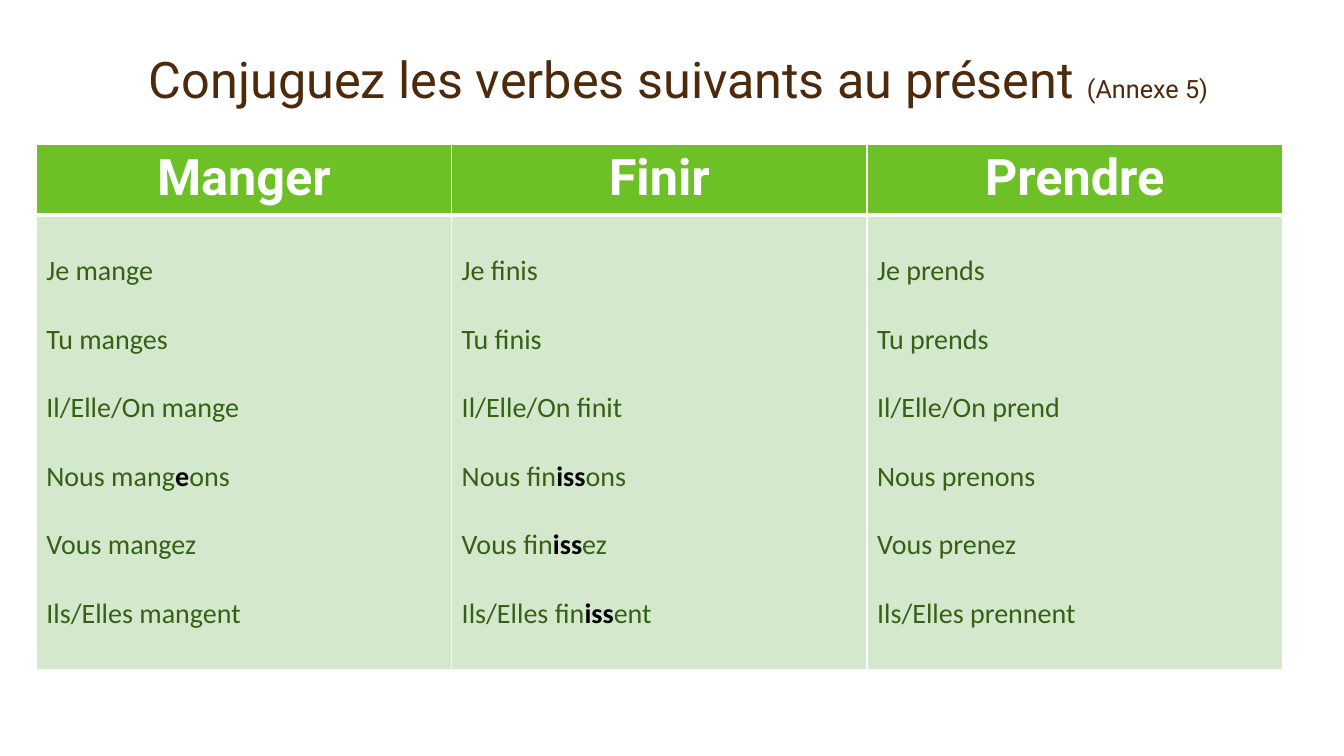
from dataclasses import dataclass

from lxml import etree
from pptx import Presentation
from pptx.dml.color import RGBColor
from pptx.enum.text import MSO_ANCHOR, PP_ALIGN
from pptx.oxml.ns import qn
from pptx.util import Inches, Pt

CENTER = PP_ALIGN.CENTER
MIDDLE = MSO_ANCHOR.MIDDLE
BLANK = 6


@dataclass(frozen=True)
class Theme:
    brown: str = "4D2A0B"
    green: str = "6DC025"
    pale: str = "D4E8CD"
    dark: str = "366013"
    black: str = "000000"
    white: str = "FFFFFF"
    head: str = "Roboto"
    body: str = "Calibri"
    big: int = 36
    mid: int = 20
    small: int = 18


THEME = Theme()
TITLE = "Conjuguez les verbes suivants au présent "
NOTE = "(Annexe 5)"
# Asterisks enclose the letters to stress.
VERBS = {
    "Manger": ["Je mange", "Tu manges", "Il/Elle/On mange",
               "Nous mang*e*ons", "Vous mangez", "Ils/Elles mangent"],
    "Finir": ["Je finis", "Tu finis", "Il/Elle/On finit",
              "Nous fin*iss*ons", "Vous fin*iss*ez", "Ils/Elles fin*iss*ent"],
    "Prendre": ["Je prends", "Tu prends", "Il/Elle/On prend",
                "Nous prenons", "Vous prenez", "Ils/Elles prennent"],
}


def add_run(para, text, face, size, color, bold=False):
    run = para.add_run()
    run.text = text
    font = run.font
    font.name, font.size, font.bold = face, Pt(size), bold
    font.color.rgb = RGBColor.from_string(color)


def add_title(slide, left, top, width, height):
    box = slide.shapes.add_textbox(
        Inches(left), Inches(top), Inches(width), Inches(height))
    frame = box.text_frame
    frame.word_wrap = True
    frame.vertical_anchor = MIDDLE
    para = frame.paragraphs[0]
    para.alignment = CENTER
    add_run(para, TITLE, THEME.head, THEME.big, THEME.brown)
    add_run(para, NOTE, THEME.head, THEME.small, THEME.brown)


def paint(cell, color, top, bottom):
    """Fill the cell and rule it in white; top and bottom are in points."""
    cell.fill.solid()
    cell.fill.fore_color.rgb = RGBColor.from_string(color)
    props = cell._tc.get_or_add_tcPr()
    sides = {"a:lnL": 1, "a:lnR": 1, "a:lnT": top, "a:lnB": bottom}
    for i, (tag, width) in enumerate(sides.items()):
        line = etree.Element(qn(tag), w=str(Pt(width)))
        fill = etree.SubElement(line, qn("a:solidFill"))
        etree.SubElement(fill, qn("a:srgbClr"), val=THEME.white)
        props.insert(i, line)


def fill_head(cell, verb):
    paint(cell, THEME.green, 1, 3)
    para = cell.text_frame.paragraphs[0]
    para.alignment = CENTER
    add_run(para, verb, THEME.head, THEME.big, THEME.white, True)


def fill_forms(cell, forms):
    paint(cell, THEME.pale, 3, 1)
    cell.margin_top = Inches(0.39)
    frame = cell.text_frame
    for i, form in enumerate(forms):
        para = frame.add_paragraph() if i else frame.paragraphs[0]
        if i:
            para.space_before = Pt(24.4)
        for j, part in enumerate(form.split("*")):
            stress = j % 2 == 1
            color = THEME.black if stress else THEME.dark
            add_run(para, part, THEME.body, THEME.mid, color, stress)


def add_verbs(slide, left, top, width, height, head=0.68):
    table = slide.shapes.add_table(
        2, len(VERBS), Inches(left), Inches(top),
        Inches(width), Inches(height)).table
    table.rows[0].height = Inches(head)
    table.rows[1].height = Inches(height - head)
    for col, (verb, forms) in enumerate(VERBS.items()):
        table.columns[col].width = Inches(width / len(VERBS))
        fill_head(table.cell(0, col), verb)
        fill_forms(table.cell(1, col), forms)


def main():
    deck = Presentation()
    deck.slide_width, deck.slide_height = Inches(13.33), Inches(7.5)
    slide = deck.slides.add_slide(deck.slide_layouts[BLANK])
    add_title(slide, 0.53, 0.43, 12.4, 0.7)
    add_verbs(slide, 0.36, 1.43, 12.36, 5.19)
    deck.save("out.pptx")


if __name__ == "__main__":
    main()
